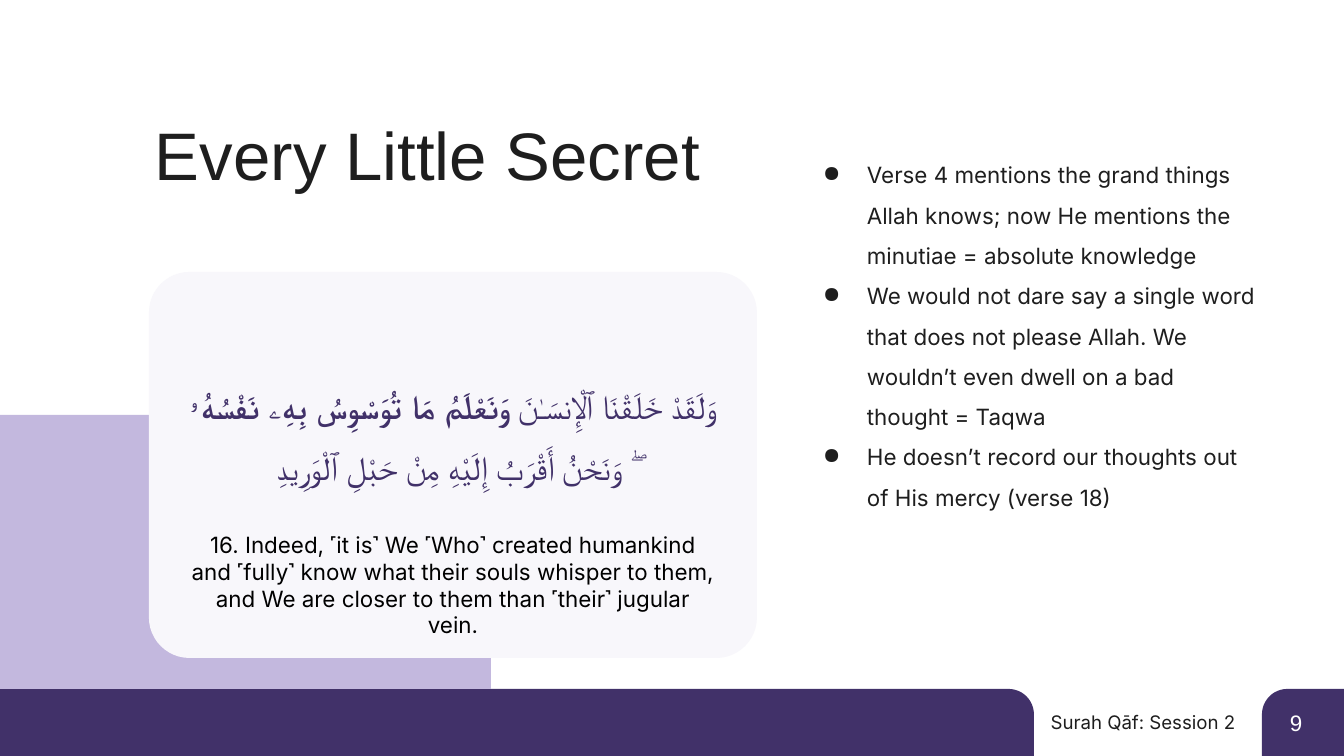
"""Build the "Every Little Secret" slide."""
from dataclasses import dataclass

from lxml import etree
from pptx import Presentation
from pptx import util as u
from pptx.dml.color import RGBColor
from pptx.enum import shapes, text
from pptx.oxml.ns import qn


@dataclass(frozen=True)
class Theme:
    purple: str = "413169"
    lilac: str = "C3B8DE"
    card: str = "F8F7FB"
    ink: str = "1E1E1E"
    black: str = "000000"
    white: str = "FFFFFF"
    heading: str = "Arial"
    body: str = "Inter"
    arabic: str = "Open Sans"
    title_size: int = 36
    verse_size: int = 18
    body_size: int = 12
    footer_size: int = 10


theme = Theme()
SCALE = 914400 / 134.4
presentation = Presentation()
presentation.slide_width = u.Emu(round(1344 * SCALE))
presentation.slide_height = u.Emu(round(756 * SCALE))
slide = presentation.slides.add_slide(presentation.slide_layouts[6])


def add_panel(kind, box, color, corner):
    shape = slide.shapes.add_shape(kind, *[u.Emu(round(n * SCALE)) for n in box])
    shape.shadow.inherit = False
    shape.adjustments[0] = corner
    shape.fill.solid()
    shape.fill.fore_color.rgb = RGBColor.from_string(color)
    shape.line.fill.background()
    return shape


def add_text(box, paragraphs, font, size, color, align=text.PP_ALIGN.LEFT, spacing=1.0, bullet=None):
    shape = slide.shapes.add_textbox(*[u.Emu(round(n * SCALE)) for n in box])
    frame = shape.text_frame
    frame.word_wrap = True
    frame.margin_left = frame.margin_right = u.Emu(round(7 * SCALE))
    frame.margin_top = frame.margin_bottom = u.Emu(round(3 * SCALE))
    for index, runs in enumerate(paragraphs):
        paragraph = frame.add_paragraph() if index else frame.paragraphs[0]
        paragraph.alignment = align
        paragraph.line_spacing = spacing
        if bullet:
            properties = paragraph._p.get_or_add_pPr()
            properties.set("marL", str(round(67 * SCALE)))
            properties.set("indent", str(round(-44 * SCALE)))
            bullet_color = etree.SubElement(properties, qn("a:buClr"))
            etree.SubElement(bullet_color, qn("a:srgbClr"), val=color)
            etree.SubElement(properties, qn("a:buChar"), char=bullet)
        paragraph.font.name = font
        paragraph.font.size = u.Pt(size)
        paragraph.font.color.rgb = RGBColor.from_string(color)
        for words, bold in runs:
            run = paragraph.add_run()
            run.text = words
            if bold:
                run.font.bold = True
    return frame


ROUND_ONE = shapes.MSO_SHAPE.ROUND_1_RECTANGLE
ROUND_ALL = shapes.MSO_SHAPE.ROUNDED_RECTANGLE
CENTER = text.PP_ALIGN.CENTER

page_tab = add_panel(ROUND_ONE, (1262, 689, 82, 67), theme.purple, 0.38)
page_tab._element.spPr.xfrm.set("flipH", "1")
add_text((999, 708, 243, 30), [[("Surah Qāf: Session 2", False)]],
         theme.body, theme.footer_size, theme.ink, text.PP_ALIGN.RIGHT)
add_text((1283, 706, 41, 34), [[("9", False)]], theme.heading, theme.body_size, theme.white)
add_panel(ROUND_ONE, (0, 689, 1034, 67), theme.purple, 0.38)
add_panel(ROUND_ALL, (0, 415, 491, 274), theme.lilac, 0)
add_panel(ROUND_ALL, (149, 272, 608, 386), theme.card, 0.105)

translation = (
    "16. Indeed, ˹it is˺ We ˹Who˺ created humankind and ˹fully˺ know what their souls "
    "whisper to them, and We are closer to them than ˹their˺ jugular vein."
)
add_text((181, 528, 544, 89), [[(translation, False)]],
         theme.body, theme.body_size, theme.black, CENTER)

verse = [
    ("وَلَقَدْ خَلَقْنَا ٱلْإِنسَـٰنَ ", False),
    ("وَنَعْلَمُ مَا تُوَسْوِسُ بِهِۦ نَفْسُهُۥ", True),
    (" ۖ وَنَحْنُ أَقْرَبُ إِلَيْهِ مِنْ حَبْلِ ٱلْوَرِيدِ", False),
]
verse_frame = add_text((181, 314, 544, 176), [verse],
                       theme.arabic, theme.verse_size, theme.purple, CENTER, 1.5)
verse_frame.vertical_anchor = text.MSO_ANCHOR.BOTTOM

add_text((148, 110, 914, 89), [[("Every Little Secret", False)]],
         theme.heading, theme.title_size, theme.ink)

points = [
    "Verse 4 mentions the grand things Allah knows; now He mentions the minutiae = absolute knowledge",
    "We would not dare say a single word that does not please Allah. "
    "We wouldn’t even dwell on a bad thought = Taqwa",
    "He doesn’t record our thoughts out of His mercy (verse 18)",
]
add_text((793, 145, 474, 360), [[(point, False)] for point in points],
         theme.body, theme.body_size, theme.ink, spacing=1.5, bullet="●")

presentation.save("out.pptx")
